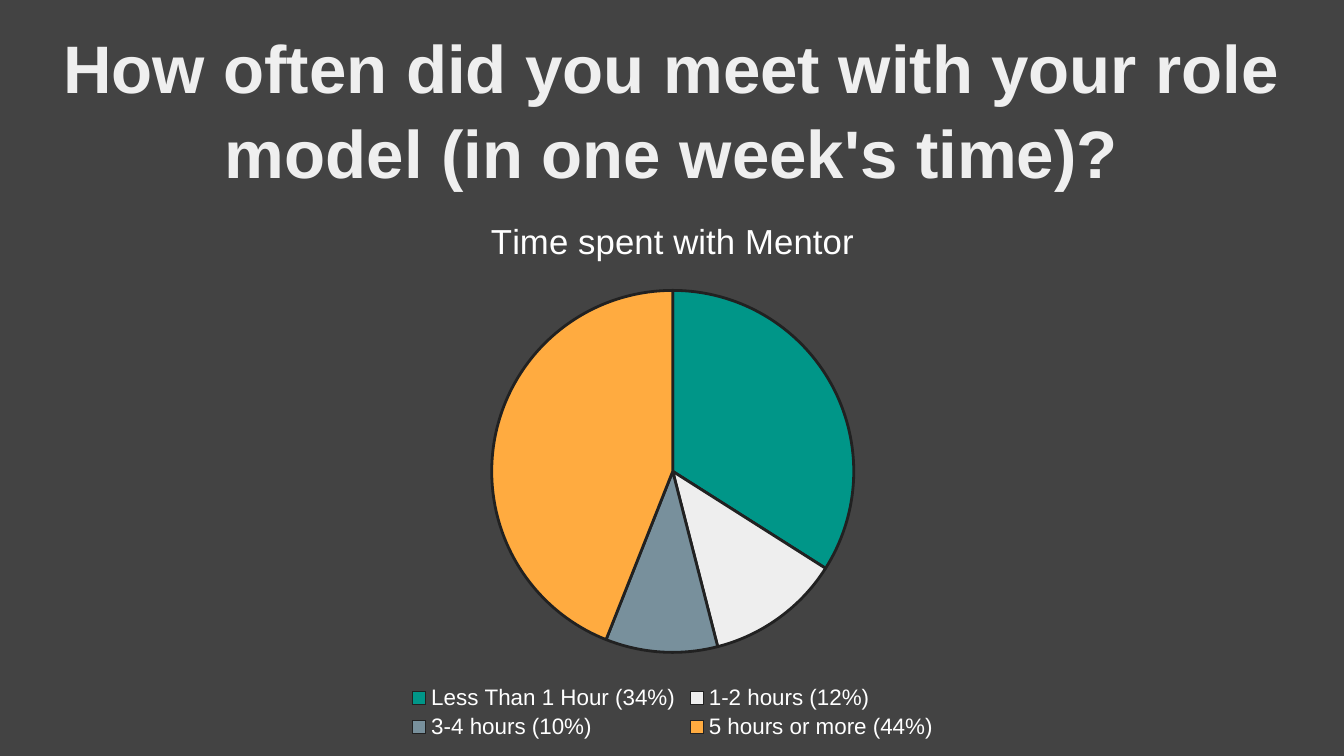
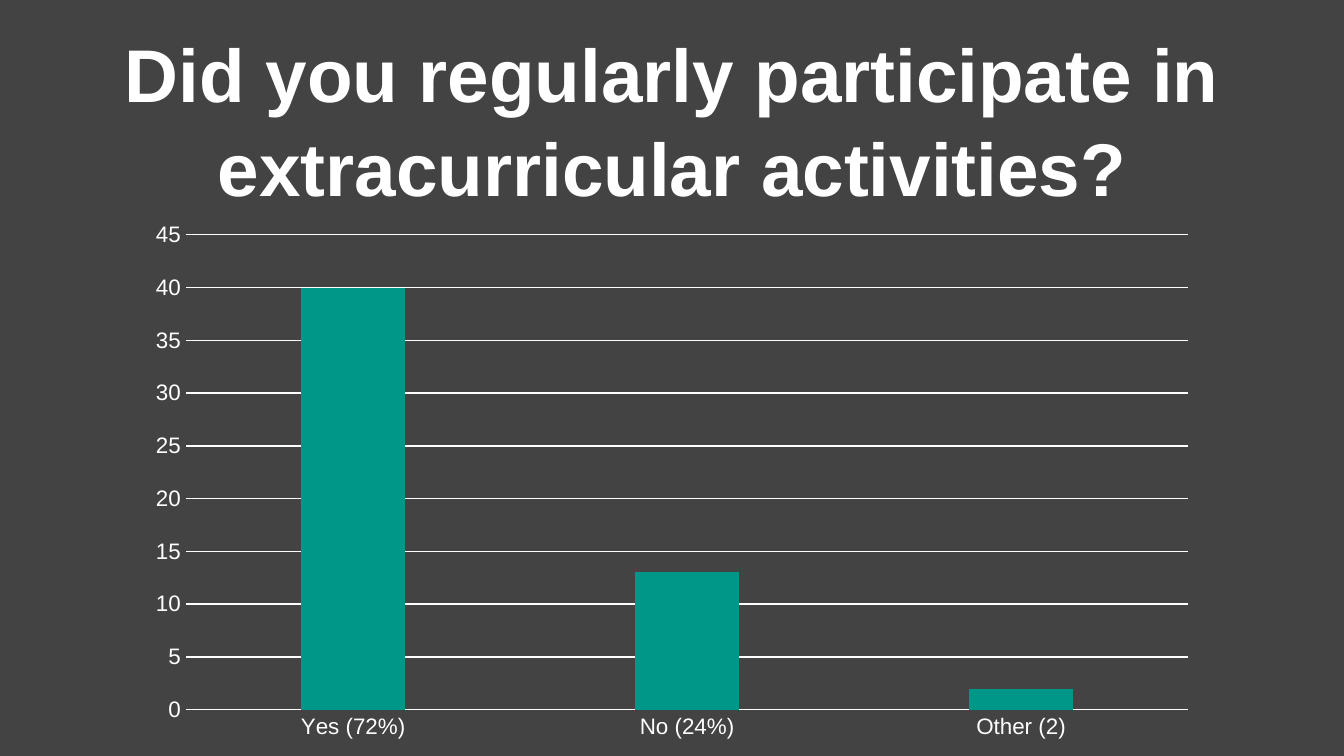
"""Builds two survey slides, each with a headline question and a chart."""
import pptx
import pptx.chart.data
import pptx.dml.color
import pptx.enum.chart
import pptx.enum.text
import pptx.util

Cm = pptx.util.Cm
Pt = pptx.util.Pt
FONT = "Arial"
COLORS = {
    "background": "434343",
    "text": "FFFFFF",
    "soft_text": "EFEFEF",
    "outline": "212121",
    "teal": "009688",
    "light": "EEEEEE",
    "slate": "78909C",
    "orange": "FFAB40",
}


def rgb(name):
    return pptx.dml.color.RGBColor.from_string(COLORS[name])


def style_font(font, size, color="text", bold=False):
    font.name = FONT
    font.size = Pt(size)
    font.bold = bold
    font.color.rgb = rgb(color)


def paint(fill, color):
    fill.solid()
    fill.fore_color.rgb = rgb(color)


def draw_line(line, color, width):
    paint(line.fill, color)
    line.width = Pt(width)


def add_slide(presentation):
    slide = presentation.slides.add_slide(presentation.slide_layouts[6])
    paint(slide.background.fill, "background")
    return slide


def add_question(slide, box, text, size, color):
    frame = slide.shapes.add_textbox(*map(Cm, box)).text_frame
    frame.word_wrap = True
    frame.vertical_anchor = pptx.enum.text.MSO_ANCHOR.TOP
    frame.margin_left = frame.margin_right = Cm(0.25)
    frame.margin_top = frame.margin_bottom = Cm(0.25)
    paragraph = frame.paragraphs[0]
    paragraph.text = text
    paragraph.alignment = pptx.enum.text.PP_ALIGN.CENTER
    paragraph.line_spacing = 1.05
    style_font(paragraph.font, size, color, bold=True)


def add_chart(slide, box, kind, series_name, values):
    data = pptx.chart.data.CategoryChartData()
    data.categories = list(values)
    data.add_series(series_name, list(values.values()))
    chart = slide.shapes.add_chart(kind, *map(Cm, box), data).chart
    style_font(chart.font, 10)
    return chart


def add_time_pie(slide, box):
    name = "Time spent with Mentor"
    values = {
        "Less Than 1 Hour (34%)": 34,
        "1-2 hours (12%)": 12,
        "3-4 hours (10%)": 10,
        "5 hours or more (44%)": 44,
    }
    chart = add_chart(slide, box, pptx.enum.chart.XL_CHART_TYPE.PIE, name, values)
    chart.has_title = True
    title = chart.chart_title.text_frame.paragraphs[0]
    title.text = name
    style_font(title.font, 18.6)

    chart.has_legend = True
    chart.legend.position = pptx.enum.chart.XL_LEGEND_POSITION.BOTTOM
    chart.legend.include_in_layout = False
    style_font(chart.legend.font, 12)

    plot = chart.plots[0]
    plot.vary_by_categories = True
    for index, color in enumerate(("teal", "light", "slate", "orange")):
        slice_format = plot.series[0].points[index].format
        paint(slice_format.fill, color)
        draw_line(slice_format.line, "outline", 1.5)


def add_activity_columns(slide, box):
    values = {"Yes (72%)": 40, "No (24%)": 13, "Other (2)": 2}
    kind = pptx.enum.chart.XL_CHART_TYPE.COLUMN_CLUSTERED
    chart = add_chart(slide, box, kind, "Series 1", values)
    chart.has_title = False
    chart.has_legend = False

    plot = chart.plots[0]
    plot.vary_by_categories = False
    plot.gap_width = 219
    plot.overlap = -27
    paint(plot.series[0].format.fill, "teal")

    for axis in (chart.category_axis, chart.value_axis):
        axis.major_tick_mark = pptx.enum.chart.XL_TICK_MARK.NONE
        axis.minor_tick_mark = pptx.enum.chart.XL_TICK_MARK.NONE
        style_font(axis.tick_labels.font, 12)
    draw_line(chart.category_axis.format.line, "text", 0.75)

    value_axis = chart.value_axis
    value_axis.minimum_scale = 0
    value_axis.maximum_scale = 45
    value_axis.major_unit = 5
    value_axis.format.line.fill.background()
    value_axis.has_major_gridlines = True
    draw_line(value_axis.major_gridlines.format.line, "text", 0.75)


def build_mentor_slide(presentation):
    slide = add_slide(presentation)
    question = "How often did you meet with your role model (in one week's time)?"
    add_question(slide, (0.86, 0.18, 23.67, 3.48), question, 36, "soft_text")
    add_time_pie(slide, (4.22, 3.66, 16.99, 10.41))


def build_activity_slide(presentation):
    slide = add_slide(presentation)
    question = "Did you regularly participate in extracurricular activities?"
    add_question(slide, (0, 0.2, 25.4, 3.94), question, 40, "text")
    add_activity_columns(slide, (2.54, 4.01, 20.32, 10.16))


def main():
    presentation = pptx.Presentation()
    presentation.slide_width = Cm(25.4)
    presentation.slide_height = Cm(14.29)
    build_mentor_slide(presentation)
    build_activity_slide(presentation)
    presentation.save("out.pptx")


if __name__ == "__main__":
    main()
